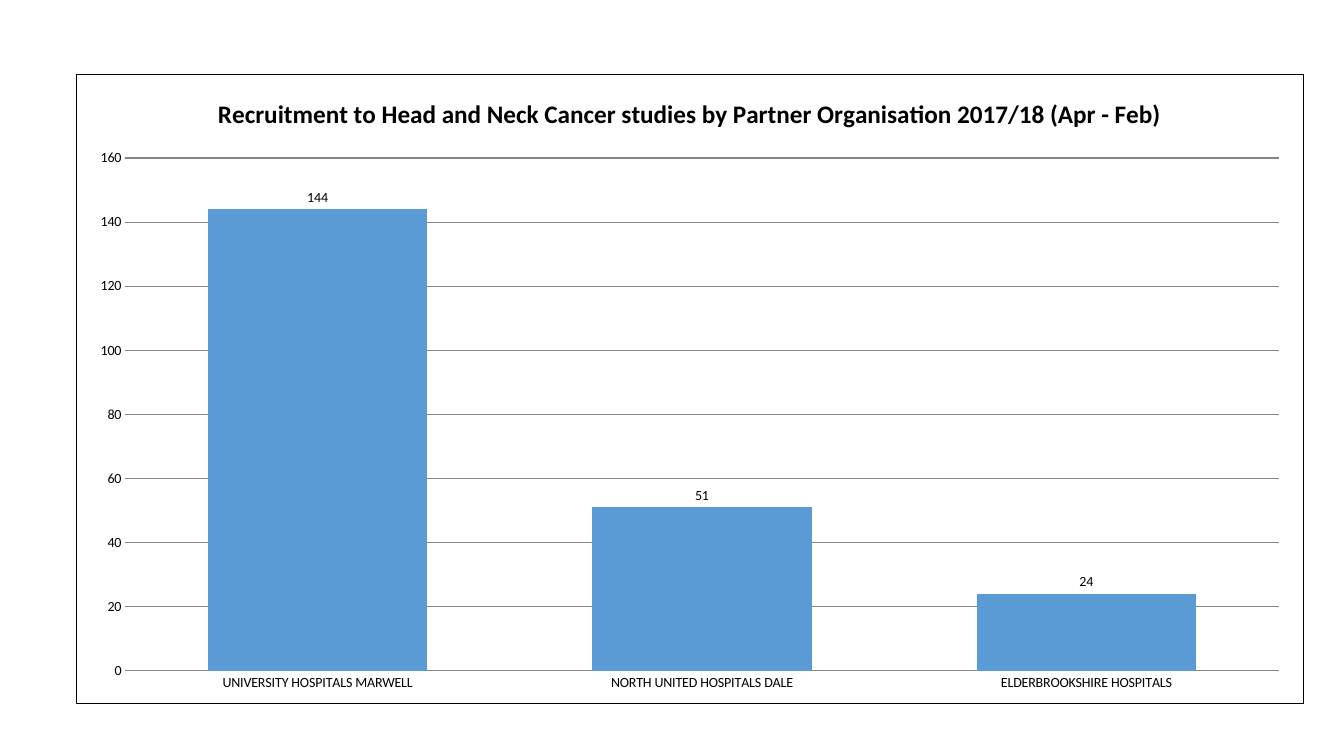
from pptx import Presentation
from pptx.chart.data import CategoryChartData
from pptx.dml.color import RGBColor
from pptx.enum.chart import XL_CHART_TYPE, XL_LABEL_POSITION, XL_TICK_MARK
from pptx.oxml import parse_xml
from pptx.oxml.ns import nsdecls, qn
from pptx.util import Inches, Pt

COLUMNS = XL_CHART_TYPE.COLUMN_CLUSTERED
OUTSIDE_END = XL_LABEL_POSITION.OUTSIDE_END
NO_TICK = XL_TICK_MARK.NONE

FONT = "Calibri"
BLACK, GRID, BLUE, WHITE = "000000", "868686", "5B9BD5", "FFFFFF"
TITLE = ("Recruitment to Head and Neck Cancer studies "
         "by Partner Organisation 2017/18 (Apr - Feb)")
RECRUITS = {
    "UNIVERSITY HOSPITALS MARWELL": 144,
    "NORTH UNITED HOSPITALS DALE": 51,
    "ELDERBROOKSHIRE HOSPITALS": 24,
}


def rgb(color):
    return RGBColor.from_string(color)


def style_font(font, size, bold=False):
    font.name, font.size, font.bold = FONT, Pt(size), bold
    font.color.rgb = rgb(BLACK)


def style_line(line, color, width=0.75):
    line.color.rgb = rgb(color)
    line.width = Pt(width)


def frame_chart(chart, fill, border, width=0.75):
    """Fill and outline the whole chart area."""
    frame = parse_xml(
        f'<c:spPr {nsdecls("c", "a")}>'
        f'<a:solidFill><a:srgbClr val="{fill}"/></a:solidFill>'
        f'<a:ln w="{Pt(width)}"><a:solidFill><a:srgbClr val="{border}"/></a:solidFill></a:ln>'
        '</c:spPr>')
    chart.element.find(qn("c:chart")).addnext(frame)


def add_title(chart, text):
    tf = chart.chart_title.text_frame
    tf.text = text
    style_font(tf.paragraphs[0].font, 18, bold=True)
    chart.chart_title.include_in_layout = False


def style_axes(chart):
    for axis in (chart.category_axis, chart.value_axis):
        axis.major_tick_mark = axis.minor_tick_mark = NO_TICK
        style_font(axis.tick_labels.font, 10)
    style_line(chart.category_axis.format.line, GRID)
    values = chart.value_axis
    values.minimum_scale, values.maximum_scale, values.major_unit = 0, 160, 20
    values.format.line.fill.background()
    style_line(values.major_gridlines.format.line, GRID)


def style_columns(plot):
    plot.gap_width, plot.overlap = 75, -25
    plot.vary_by_categories = False
    fill = plot.series[0].format.fill
    fill.solid()
    fill.fore_color.rgb = rgb(BLUE)
    plot.has_data_labels = True
    labels = plot.data_labels
    labels.show_value = True
    labels.position = OUTSIDE_END
    style_font(labels.font, 10)


def add_column_chart(s, title, values, left, top, width, height):
    data = CategoryChartData()
    data.categories = list(values)
    data.add_series("Series 1", list(values.values()))
    chart = s.shapes.add_chart(COLUMNS, left, top, width, height, data).chart
    chart.has_legend = False
    style_font(chart.font, 10)
    frame_chart(chart, WHITE, BLACK)
    add_title(chart, title)
    style_axes(chart)
    style_columns(chart.plots[0])


def main():
    prs = Presentation()
    prs.slide_width, prs.slide_height = Inches(13.33), Inches(7.5)
    s = prs.slides.add_slide(prs.slide_layouts[6])
    add_column_chart(s, TITLE, RECRUITS, Inches(0.75), Inches(0.73),
                     Inches(12.18), Inches(6.25))
    prs.save("out.pptx")


if __name__ == "__main__":
    main()
